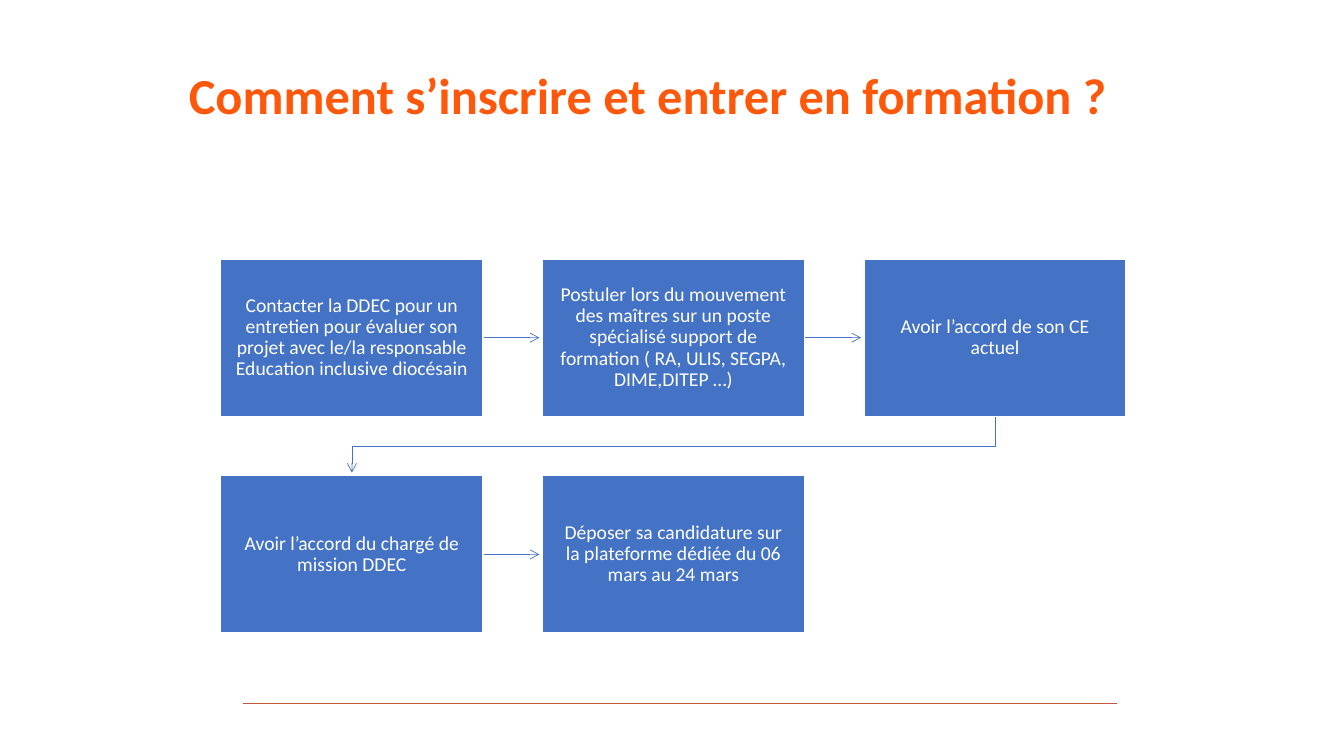
from dataclasses import dataclass
from lxml.etree import SubElement as Sub
from pptx import Presentation
from pptx.dml.color import RGBColor as RGB
from pptx.enum.shapes import MSO_CONNECTOR as Link, MSO_SHAPE as Form
from pptx.enum.text import MSO_ANCHOR as Anchor, MSO_AUTO_SIZE as Fit, PP_ALIGN as Align
from pptx.oxml.ns import qn
from pptx.util import Inches, Pt


@dataclass
class Theme:
    font: str = "Calibri"
    title: RGB = RGB.from_string("FF580B")
    box: RGB = RGB.from_string("4472C4")
    rule: RGB = RGB.from_string("C35739")
    white: RGB = RGB.from_string("FFFFFF")
    head: int = 36
    body: int = 14


def stroke(line, color, width, arrow=False):
    line.line.color.rgb = color
    line.line.width = Pt(width)
    props = line._element.spPr
    if arrow:
        Sub(props.find(qn("a:ln")), qn("a:tailEnd"), type="arrow")
    Sub(props, qn("a:effectLst"))


def write(frame, text, size, color, align):
    frame.word_wrap = True
    frame.auto_size = Fit.NONE
    frame.vertical_anchor = Anchor.MIDDLE
    para = frame.paragraphs[0]
    para.text = text
    para.alignment = align
    para.line_spacing = 0.9
    para.font.name = theme.font
    para.font.size = Pt(size)
    para.font.color.rgb = color
    return para


theme = Theme()
deck = Presentation()
deck.slide_width, deck.slide_height = Inches(13.33), Inches(7.5)
slide = deck.slides.add_slide(deck.slide_layouts[5])
shapes = slide.shapes

title = shapes.title
title.left, title.top = Inches(0.92), Inches(0.4)
title.width, title.height = Inches(10.16), Inches(1.15)
para = write(title.text_frame, "Comment s’inscrire et entrer en formation ?",
             theme.head, theme.title, Align.RIGHT)
para.font.bold = True

steps = [
    "Contacter la DDEC pour un entretien pour évaluer son projet avec le/la responsable Education inclusive diocésain",
    "Postuler lors du mouvement des maîtres sur un poste spécialisé support de formation ( RA, ULIS, SEGPA, DIME,DITEP …)",
    "Avoir l’accord de son CE actuel",
    "Avoir l’accord du chargé de mission DDEC",
    "Déposer sa candidature sur la plateforme dédiée du 06 mars au 24 mars",
]
cols = 3
left, top = Inches(2.19), Inches(2.57)
wide, high = Inches(2.6), Inches(1.56)
gap = Inches(0.59)
reach = gap - Inches(0.03)
inset = Inches(0.13)

for num, step in enumerate(steps):
    row, col = divmod(num, cols)
    x = left + col * (wide + gap)
    y = top + row * (high + gap)
    mid, base = x + wide // 2, y + high
    if num < len(steps) - 1:
        if col < cols - 1:
            arrow = shapes.add_connector(Link.STRAIGHT, x + wide, y + high // 2,
                                         x + wide + reach, y + high // 2)
        else:
            first = left + wide // 2
            turn = base + gap // 2
            trace = shapes.build_freeform(mid, base)
            trace.add_line_segments([(mid, turn), (first, turn), (first, base + reach)], close=False)
            arrow = trace.convert_to_shape()
            arrow.fill.background()
        stroke(arrow, theme.box, 0.5, arrow=True)

    box = shapes.add_shape(Form.RECTANGLE, x, y, wide, high)
    box.shadow.inherit = False
    box.fill.solid()
    box.fill.fore_color.rgb = theme.box
    box.line.color.rgb = theme.white
    box.line.width = Pt(1)
    frame = box.text_frame
    frame.margin_left = frame.margin_right = inset
    frame.margin_top = frame.margin_bottom = inset
    write(frame, step, theme.body, theme.white, Align.CENTER)

foot = Inches(6.98)
rule = shapes.add_connector(Link.STRAIGHT, Inches(2.41), foot, Inches(11.08), foot)
stroke(rule, theme.rule, 0.75)

deck.save("out.pptx")
